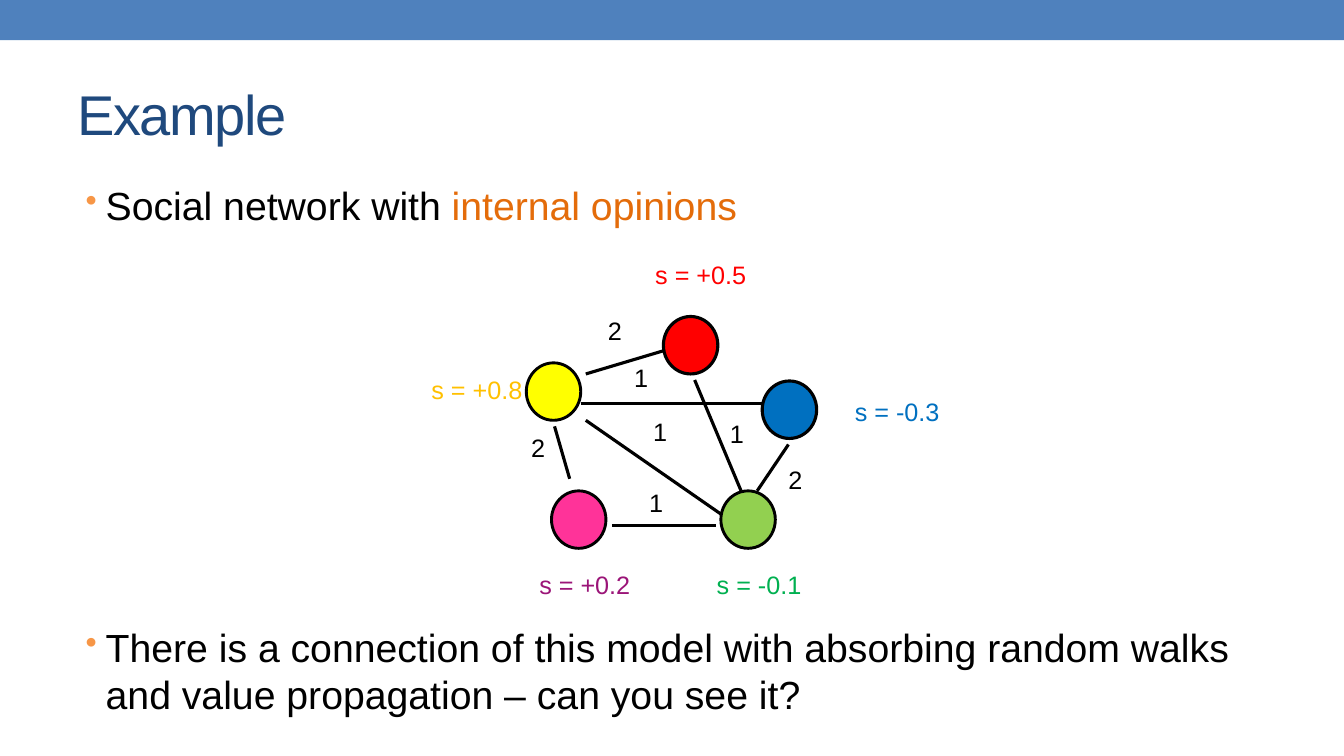
from pptx import Presentation
from pptx import util as u
from pptx.dml.color import RGBColor
from pptx.enum import shapes, text
from pptx.oxml import ns, xmlchemy

HUES = {
    "bar": "4F81BD", "title": "1F497D", "ink": "000000", "key": "E46C0A",
    "dot": "F79646", "red": "FF0000", "blue": "0070C0", "lime": "92D050",
    "green": "00B050", "pink": "FF3399", "plum": "9B1578",
    "sun": "FFFF00", "gold": "FFC000",
}
NODES = [
    (1.58, 0.14, "red", 2.25, "s = +0.5", 1.4, -0.48, 1.11, "red"),
    (2.56, 0.78, "blue", 2.25, "s = -0.3", 3.38, 0.88, 1.05, "blue"),
    (2.15, 1.87, "lime", 2.08, "s = -0.1", 2.01, 2.6, 1.05, "green"),
    (0.47, 1.87, "pink", 2.08, "s = +0.2", 0.25, 2.6, 1.11, "plum"),
    (0.22, 0.6, "sun", 2.08, "s = +0.8", -0.82, 0.66, 1.11, "gold"),
]
EDGES = [
    (1.07, 2.21, 2.1, 2.21, "1", 1.34, 1.79),
    (0.65, 1.75, 0.5, 1.23, "2", 0.17, 1.24),
    (0.81, 0.71, 1.58, 0.48, "2", 0.93, 0.08),
    (0.76, 1, 2.56, 1, "1", 1.19, 0.55),
    (2.35, 1.87, 1.89, 0.77, "1", 2.14, 1.1),
    (2.51, 1.87, 2.82, 1.41, "2", 2.72, 1.56),
    (2.15, 2.1, 0.81, 1.17, "1", 1.38, 1.08),
]


def tint(name):
    """Return the named colour."""
    return RGBColor.from_string(HUES[name])


def apply(item, vals):
    """Set each named value on the item."""
    for name, val in vals.items():
        setattr(item, name, val)


def write(para, words, size, hue):
    """Add a run of text to a paragraph and return it."""
    run = para.add_run()
    run.text = words
    apply(run.font, {"name": "Arial", "size": u.Pt(size)})
    run.font.color.rgb = tint(hue)
    return run


def frame(parts, box, wrap=True, anchor=text.MSO_ANCHOR.TOP):
    """Add a text box and return its text frame."""
    body = parts.add_textbox(*map(u.Inches, box)).text_frame
    apply(body, {"word_wrap": wrap, "vertical_anchor": anchor})
    return body


def label(parts, box, words, hue):
    """Add a short label that does not wrap."""
    body = frame(parts, box, False)
    body.auto_size = text.MSO_AUTO_SIZE.SHAPE_TO_FIT_TEXT
    write(body.paragraphs[0], words, 18, hue)


def shape(parts, kind, box, hue):
    """Add a filled shape with no shadow or line."""
    item = parts.add_shape(kind, *map(u.Inches, box))
    item.shadow.inherit = False
    item.fill.solid()
    item.fill.fore_color.rgb = tint(hue)
    item.line.fill.background()
    return item


def stroke(line, width):
    """Give a line its ink and width."""
    line.color.rgb = tint("ink")
    line.width = u.Pt(width)


def header(parts, box):
    """Draw the top bar and the title."""
    left, top, wide, high = box
    shape(parts, shapes.MSO_SHAPE.RECTANGLE, (left, top, wide, 0.4), "bar")
    body = frame(parts, (left + 0.67, top + 0.58, 12, high - 0.58),
                 anchor=text.MSO_ANCHOR.MIDDLE)
    run = write(body.paragraphs[0], "Example", 40, "title")
    run._r.get_or_add_rPr().set("spc", "-100")


def bullet(para, gap):
    """Give a paragraph its hanging bullet and space before."""
    para.space_before = u.Pt(gap)
    props = para._p.get_or_add_pPr()
    apply_xml = {"marL": u.Inches(0.2), "indent": u.Inches(-0.2)}
    for name, val in apply_xml.items():
        props.set(name, str(val))
    color = xmlchemy.OxmlElement("a:buClr")
    color.append(xmlchemy.OxmlElement("a:srgbClr"))
    color[0].set("val", HUES["dot"])
    size = xmlchemy.OxmlElement("a:buSzPct")
    size.set("val", "85000")
    mark = xmlchemy.OxmlElement("a:buChar")
    mark.set("char", "•")
    props.extend([color, size, mark])


def points(parts, box):
    """Write the two bullets above and below the graph."""
    body = frame(parts, box)
    first, last = body.paragraphs[0], body.add_paragraph()
    bullet(first, 5.6)
    write(first, "Social network with ", 28, "ink")
    write(first, "internal opinions", 28, "key")
    bullet(last, 282)
    write(last, "There is a connection of this model with absorbing random "
          "walks and value propagation – can you see it?", 28, "ink")


def graph(parts, box):
    """Draw the weighted network with its opinions."""
    left, top = box
    for x1, y1, x2, y2, *_ in EDGES:
        ends = (left + x1, top + y1, left + x2, top + y2)
        edge = parts.add_connector(shapes.MSO_CONNECTOR.STRAIGHT,
                                   *map(u.Inches, ends))
        stroke(edge.line, 2.25)
        edge._element.find(ns.qn("p:spPr")).append(
            xmlchemy.OxmlElement("a:effectLst"))
    for x, y, fill, width, *_ in NODES:
        node = shape(parts, shapes.MSO_SHAPE.OVAL,
                     (left + x, top + y, 0.54, 0.57), fill)
        stroke(node.line, width)
    for *_, words, x, y in EDGES:
        label(parts, (left + x, top + y, 0.34, 0.4), words, "ink")
    for *_, words, x, y, wide, hue in NODES:
        label(parts, (left + x, top + y, wide, 0.4), words, hue)


def main():
    """Build the slide and save it."""
    deck = Presentation()
    apply(deck, {"slide_width": u.Inches(13.33),
                 "slide_height": u.Inches(7.5)})
    parts = deck.slides.add_slide(deck.slide_layouts[6]).shapes
    header(parts, (0, 0, 13.33, 1.66))
    points(parts, (0.75, 1.75, 12.25, 5.58))
    graph(parts, (5, 3))
    deck.save("out.pptx")


if __name__ == "__main__":
    main()
